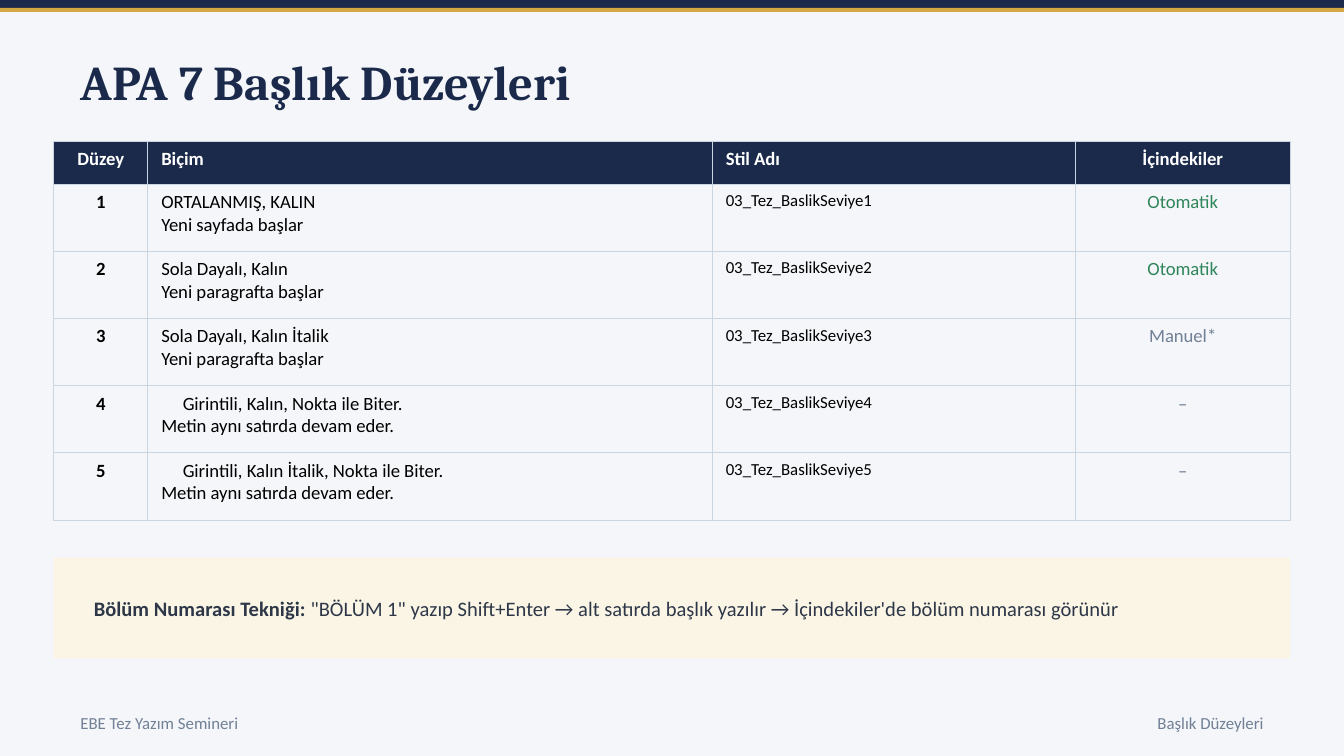
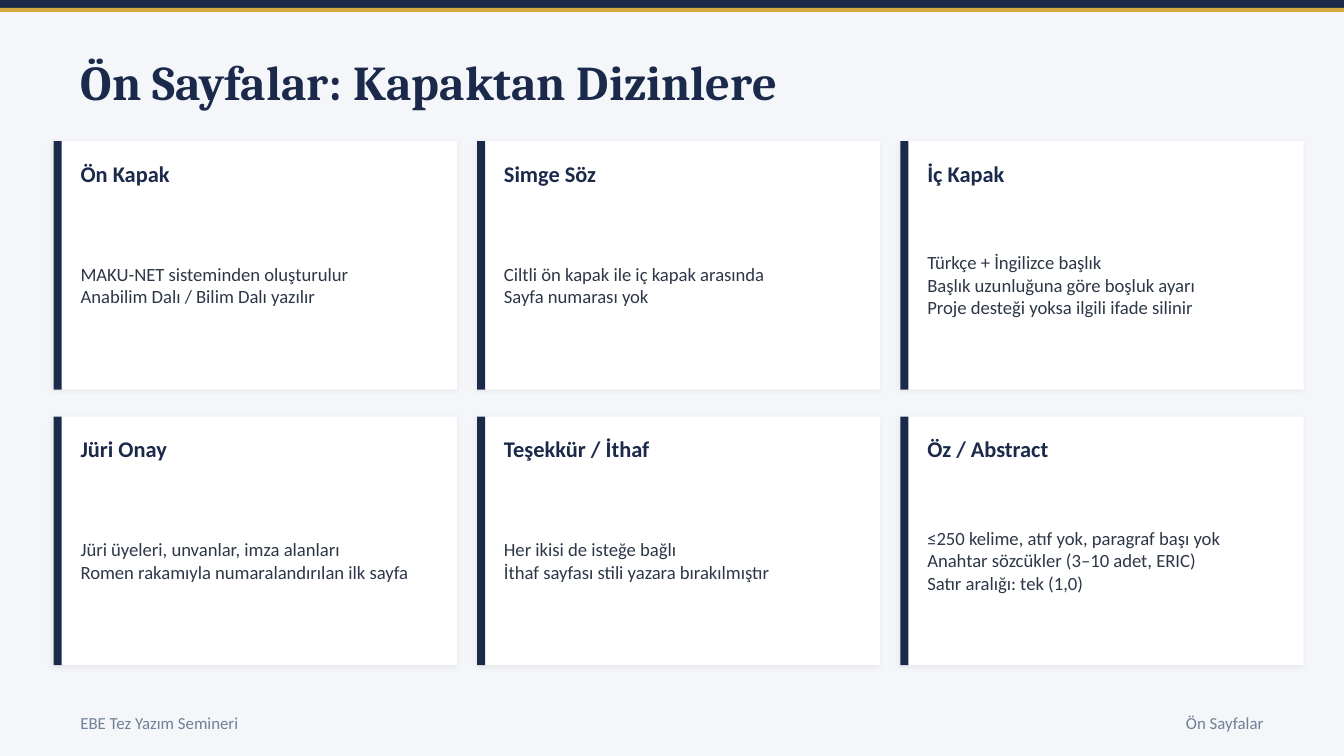
import dataclasses

import lxml.etree
import pptx
import pptx.dml.color
import pptx.enum.shapes
import pptx.enum.text
import pptx.oxml.ns
import pptx.util

Inches = pptx.util.Inches
Pt = pptx.util.Pt
ALIGN = pptx.enum.text.PP_ALIGN
qn = pptx.oxml.ns.qn


@dataclasses.dataclass(frozen=True)
class Theme:
    # Colours
    background: str = "F4F6F9"
    navy: str = "1B2A4A"
    gold: str = "D4A843"
    muted: str = "718096"
    text: str = "2D3748"
    black: str = "000000"
    white: str = "FFFFFF"
    green: str = "2F855A"
    border: str = "CBD5E0"
    note: str = "FBF5E6"
    # Fonts and sizes
    heading_font: str = "Cambria"
    body_font: str = "Calibri"
    title_size: int = 26
    note_size: int = 11
    card_title_size: int = 12
    body_size: int = 10
    small_size: int = 9


THEME = Theme()

FOOTER = "EBE Tez Yazım Semineri"

HEADERS = ["Düzey", "Biçim", "Stil Adı", "İçindekiler"]
# First line, second line, first line indented, table of contents entry, its colour
LEVELS = [
    ("ORTALANMIŞ, KALIN", "Yeni sayfada başlar", False, "Otomatik", THEME.green),
    ("Sola Dayalı, Kalın", "Yeni paragrafta başlar", False, "Otomatik", THEME.green),
    ("Sola Dayalı, Kalın İtalik", "Yeni paragrafta başlar", False, "Manuel*", THEME.muted),
    ("Girintili, Kalın, Nokta ile Biter.", "Metin aynı satırda devam eder.", True, "–", THEME.muted),
    ("Girintili, Kalın İtalik, Nokta ile Biter.", "Metin aynı satırda devam eder.", True, "–", THEME.muted),
]

NOTE_LABEL = "Bölüm Numarası Tekniği: "
NOTE_TEXT = ("\"BÖLÜM 1\" yazıp Shift+Enter → alt satırda başlık yazılır → "
             "İçindekiler'de bölüm numarası görünür")

CARDS = [
    ("Ön Kapak", ["MAKU-NET sisteminden oluşturulur", "Anabilim Dalı / Bilim Dalı yazılır"]),
    ("Simge Söz", ["Ciltli ön kapak ile iç kapak arasında", "Sayfa numarası yok"]),
    ("İç Kapak", ["Türkçe + İngilizce başlık", "Başlık uzunluğuna göre boşluk ayarı",
                  "Proje desteği yoksa ilgili ifade silinir"]),
    ("Jüri Onay", ["Jüri üyeleri, unvanlar, imza alanları", "Romen rakamıyla numaralandırılan ilk sayfa"]),
    ("Teşekkür / İthaf", ["Her ikisi de isteğe bağlı", "İthaf sayfası stili yazara bırakılmıştır"]),
    ("Öz / Abstract", ["≤250 kelime, atıf yok, paragraf başı yok", "Anahtar sözcükler (3–10 adet, ERIC)",
                       "Satır aralığı: tek (1,0)"]),
]


def rgb(colour):
    return pptx.dml.color.RGBColor.from_string(colour)


def format_run(run, size, colour, bold=False, font=THEME.body_font):
    run.font.name = font
    run.font.size = Pt(size)
    run.font.bold = bold
    run.font.color.rgb = rgb(colour)


def fill_text(text_frame, lines, size, colour, bold=False, align=ALIGN.LEFT, font=THEME.body_font):
    text_frame.text = "\n".join(lines)
    for paragraph in text_frame.paragraphs:
        paragraph.alignment = align
        for run in paragraph.runs:
            format_run(run, size, colour, bold, font)


def set_frame(text_frame, inset=None):
    text_frame.word_wrap = True
    text_frame.auto_size = pptx.enum.text.MSO_AUTO_SIZE.NONE
    text_frame.vertical_anchor = pptx.enum.text.MSO_ANCHOR.MIDDLE
    if inset is not None:
        text_frame.margin_left = text_frame.margin_right = Inches(inset)
        text_frame.margin_top = text_frame.margin_bottom = Inches(inset)


def add_text(slide, box, lines, size, colour, bold=False, align=ALIGN.LEFT, inset=None):
    shape = slide.shapes.add_textbox(*map(Inches, box))
    set_frame(shape.text_frame, inset)
    fill_text(shape.text_frame, lines, size, colour, bold, align)
    return shape


def add_rectangle(slide, box, colour):
    shape = slide.shapes.add_shape(pptx.enum.shapes.MSO_SHAPE.RECTANGLE, *map(Inches, box))
    shape.shadow.inherit = False
    shape.fill.solid()
    shape.fill.fore_color.rgb = rgb(colour)
    shape.line.fill.background()
    return shape


def add_solid_fill(parent, colour):
    fill = lxml.etree.SubElement(parent, qn("a:solidFill"))
    return lxml.etree.SubElement(fill, qn("a:srgbClr"), val=colour)


def add_soft_shadow(shape):
    effects = shape._element.spPr.find(qn("a:effectLst"))
    shadow = lxml.etree.SubElement(effects, qn("a:outerShdw"), blurRad=str(Pt(3)), dist=str(Pt(1)),
                                   dir=str(135 * 60000), algn="bl", rotWithShape="0")
    colour = lxml.etree.SubElement(shadow, qn("a:srgbClr"), val=THEME.black)
    lxml.etree.SubElement(colour, qn("a:alpha"), val="6000")


def set_cell(cell, lines, size, colour, bold=False, align=ALIGN.LEFT, fill=None):
    fill_text(cell.text_frame, lines, size, colour, bold, align)
    properties = cell._tc.get_or_add_tcPr()
    for side in ("a:lnL", "a:lnR", "a:lnT", "a:lnB"):
        line = lxml.etree.SubElement(properties, qn(side), w=str(Pt(0.5)))
        add_solid_fill(line, THEME.border)
    if fill:
        cell.fill.solid()
        cell.fill.fore_color.rgb = rgb(fill)
    else:
        cell.fill.background()


def add_base_slide(presentation, title, section):
    """Slide with the top bands, title and footers."""
    slide = presentation.slides.add_slide(presentation.slide_layouts.get_by_name("Title Only"))
    add_rectangle(slide, (0, 0, 10, 0.06), THEME.navy)
    add_rectangle(slide, (0, 0.06, 10, 0.03), THEME.gold)
    add_text(slide, (0.5, 5.2, 4, 0.35), [FOOTER], THEME.small_size, THEME.muted)
    add_text(slide, (5.5, 5.2, 4, 0.35), [section], THEME.small_size, THEME.muted, align=ALIGN.RIGHT)

    heading = slide.shapes.title
    heading.left, heading.top, heading.width, heading.height = map(Inches, (0.6, 0.3, 9, 0.6))
    set_frame(heading.text_frame, inset=0)
    fill_text(heading.text_frame, [title], THEME.title_size, THEME.navy, True, font=THEME.heading_font)
    return slide


def add_level_table(slide, box):
    table = slide.shapes.add_table(len(LEVELS) + 1, len(HEADERS), *map(Inches, box)).table
    table.horz_banding = False
    for column, width in zip(table.columns, (0.7, 4.2, 2.7, 1.6)):
        column.width = Inches(width)
    for index, row in enumerate(table.rows):
        row.height = Inches(0.5 if index else 0.32)

    size = THEME.body_size
    aligns = (ALIGN.CENTER, ALIGN.LEFT, ALIGN.LEFT, ALIGN.CENTER)
    for column, (header, align) in enumerate(zip(HEADERS, aligns)):
        set_cell(table.cell(0, column), [header], size, THEME.white, True, align, THEME.navy)

    for level, (first, second, indented, contents, colour) in enumerate(LEVELS, start=1):
        number, layout, style, listing = (table.cell(level, column) for column in range(4))
        set_cell(number, [str(level)], size, THEME.black, True, ALIGN.CENTER)
        set_cell(layout, [first, second], size, THEME.black)
        if indented:
            paragraph = layout.text_frame.paragraphs[0]
            paragraph._p.get_or_add_pPr().set("indent", str(Inches(0.16)))
        set_cell(style, [f"03_Tez_BaslikSeviye{level}"], THEME.small_size, THEME.black)
        set_cell(listing, [contents], size, colour, align=ALIGN.CENTER)


def add_note(slide, box):
    left, top, width, height = box
    add_rectangle(slide, box, THEME.note)
    text_box = (left + 0.2, top + 0.05, width - 0.4, height - 0.1)
    shape = add_text(slide, text_box, [NOTE_LABEL], THEME.note_size, THEME.text, bold=True)
    run = shape.text_frame.paragraphs[0].add_run()
    run.text = NOTE_TEXT
    format_run(run, THEME.note_size, THEME.text)


def add_card(slide, box, title, lines):
    left, top, width, height = box
    add_soft_shadow(add_rectangle(slide, box, THEME.white))
    add_rectangle(slide, (left, top, 0.06, height), THEME.navy)
    add_text(slide, (left + 0.2, top + 0.08, width - 0.4, 0.32), [title],
             THEME.card_title_size, THEME.navy, bold=True, inset=0)
    add_text(slide, (left + 0.2, top + 0.42, width - 0.4, height - 0.55), lines,
             THEME.body_size, THEME.text, inset=0)


def add_card_grid(slide, box, columns=3, rows=2, column_gap=0.15, row_gap=0.2):
    left, top, width, height = box
    card_width = (width - (columns - 1) * column_gap) / columns
    card_height = (height - (rows - 1) * row_gap) / rows
    for index, (title, lines) in enumerate(CARDS):
        row, column = divmod(index, columns)
        card_box = (left + column * (card_width + column_gap),
                    top + row * (card_height + row_gap), card_width, card_height)
        add_card(slide, card_box, title, lines)


def main():
    presentation = pptx.Presentation()
    presentation.slide_width = Inches(10)
    presentation.slide_height = Inches(5.625)
    background = presentation.slide_master.background.fill
    background.solid()
    background.fore_color.rgb = rgb(THEME.background)

    # Heading levels
    slide = add_base_slide(presentation, "APA 7 Başlık Düzeyleri", "Başlık Düzeyleri")
    add_level_table(slide, (0.4, 1.05, 9.2, 2.82))
    add_note(slide, (0.4, 4.15, 9.2, 0.75))

    # Front matter
    slide = add_base_slide(presentation, "Ön Sayfalar: Kapaktan Dizinlere", "Ön Sayfalar")
    add_card_grid(slide, (0.4, 1.05, 9.3, 3.9))

    presentation.save("out.pptx")


if __name__ == "__main__":
    main()
